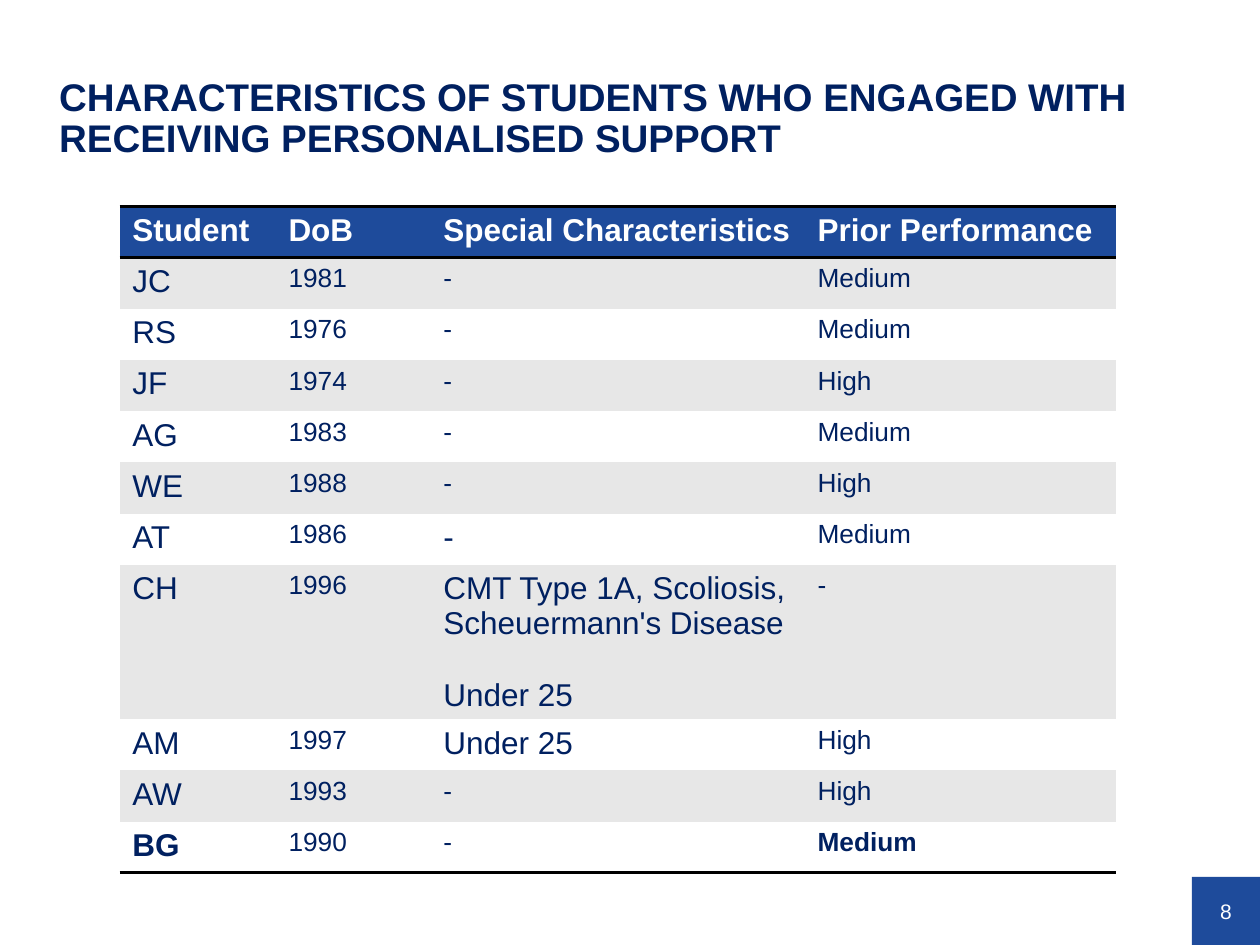
from lxml.etree import SubElement
from pptx import Presentation
from pptx.dml.color import RGBColor
from pptx.enum.shapes import MSO_SHAPE
from pptx.enum.text import MSO_ANCHOR, MSO_AUTO_SIZE, PP_ALIGN
from pptx.oxml.ns import qn
from pptx.util import Inches, Pt

FONT = "Arial"
NAVY = RGBColor(0x00, 0x20, 0x60)
BLUE = RGBColor(0x1E, 0x4B, 0x9B)
GREY = RGBColor(0xE7, 0xE7, 0xE7)
WHITE = RGBColor(0xFF, 0xFF, 0xFF)
BLACK = RGBColor(0x00, 0x00, 0x00)
PLAIN_TABLE_STYLE = "{2D5ABB26-0587-4C30-8999-92F81FD0307C}"

TITLE = "CHARACTERISTICS OF STUDENTS WHO ENGAGED WITH RECEIVING PERSONALISED SUPPORT"
PAGE_NUMBER = "8"
HEADER = ("Student", "DoB", "Special Characteristics", "Prior Performance")
STUDENTS = [
    ("JC", "1981", "-", "Medium"),
    ("RS", "1976", "-", "Medium"),
    ("JF", "1974", "-", "High"),
    ("AG", "1983", "-", "Medium"),
    ("WE", "1988", "-", "High"),
    ("AT", "1986", "-", "Medium"),
    ("CH", "1996", "CMT Type 1A, Scoliosis, Scheuermann's Disease\nUnder 25", "-"),
    ("AM", "1997", "Under 25", "High"),
    ("AW", "1993", "-", "High"),
    ("BG", "1990", "-", "Medium"),
]
LARGE_DASH = ("AT", 2)
BOLD_CELLS = {("BG", 0), ("BG", 3)}
COLUMN_WIDTHS = (1.24, 1.23, 2.97, 2.47)
TABLE_LEFT, TABLE_TOP, TABLE_HEIGHT = 0.95, 1.64, 5.28
TALL_ROW = 1.22
BADGE = 0.54


def style_paragraph(paragraph, size, color, bold=False):
    """Set the font of a whole paragraph."""
    font = paragraph.font
    font.name, font.size, font.bold = FONT, Pt(size), bold
    font.color.rgb = color


def add_border(cell, side):
    """Draw a black rule on one side of a cell."""
    line = SubElement(cell._tc.get_or_add_tcPr(), qn(f"a:{side}"), w=str(Pt(2)))
    fill = SubElement(line, qn("a:solidFill"))
    SubElement(fill, qn("a:srgbClr"), val=str(BLACK))


def fill_cell(cell, text, size, color, bold, background, sides):
    """Write and format one table cell."""
    cell.text = text
    for index, paragraph in enumerate(cell.text_frame.paragraphs):
        style_paragraph(paragraph, size, color, bold)
        if index:
            paragraph.space_before = Pt(size * 1.15)
    for side in sides:
        add_border(cell, side)
    cell.fill.solid()
    cell.fill.fore_color.rgb = background


def add_title(slide):
    """Place the slide title."""
    title = slide.shapes.title
    title.left, title.top = Inches(0.43), Inches(0.77)
    title.width, title.height = Inches(9.18), Inches(0.34)
    frame = title.text_frame
    frame.text = TITLE
    frame.word_wrap = True
    frame.auto_size = MSO_AUTO_SIZE.NONE
    frame.vertical_anchor = MSO_ANCHOR.MIDDLE
    frame.margin_left, frame.margin_top = Inches(0.04), Inches(0.02)
    frame.margin_right = frame.margin_bottom = 0
    paragraph = frame.paragraphs[0]
    paragraph.alignment = PP_ALIGN.LEFT
    paragraph.line_spacing = 0.9
    style_paragraph(paragraph, 22, NAVY, True)


def add_student_table(slide):
    """Build the banded table of students."""
    rows = len(STUDENTS) + 1
    table = slide.shapes.add_table(
        rows, len(HEADER), Inches(TABLE_LEFT), Inches(TABLE_TOP),
        Inches(sum(COLUMN_WIDTHS)), Inches(TABLE_HEIGHT)).table
    table._tbl.tblPr.find(qn("a:tableStyleId")).text = PLAIN_TABLE_STYLE
    for column, width in zip(table.columns, COLUMN_WIDTHS):
        column.width = Inches(width)
    for column, text in enumerate(HEADER):
        fill_cell(table.cell(0, column), text, 18, WHITE, True, BLUE, ("lnT", "lnB"))

    row_height = (TABLE_HEIGHT - TALL_ROW) / (rows - 1)
    table.rows[0].height = Inches(row_height)
    for row, student in enumerate(STUDENTS, 1):
        is_tall = any("\n" in text for text in student)
        table.rows[row].height = Inches(TALL_ROW if is_tall else row_height)
        background = GREY if row % 2 else WHITE
        sides = ("lnB",) if row == rows - 1 else ()
        for column, text in enumerate(student):
            key = (student[0], column)
            is_large = column == 0 or key == LARGE_DASH or (column == 2 and text != "-")
            fill_cell(table.cell(row, column), text, 18 if is_large else 15,
                      NAVY, key in BOLD_CELLS, background, sides)


def add_page_number(slide, presentation):
    """Put the page number in the bottom right corner."""
    side = Inches(BADGE)
    badge = slide.shapes.add_shape(
        MSO_SHAPE.RECTANGLE, presentation.slide_width - side,
        presentation.slide_height - side, side, side)
    badge.shadow.inherit = False
    badge.fill.solid()
    badge.fill.fore_color.rgb = BLUE
    badge.line.fill.background()
    frame = badge.text_frame
    frame.margin_left = frame.margin_right = frame.margin_top = frame.margin_bottom = 0
    frame.vertical_anchor = MSO_ANCHOR.MIDDLE
    frame.text = PAGE_NUMBER
    frame.paragraphs[0].alignment = PP_ALIGN.CENTER
    style_paragraph(frame.paragraphs[0], 12, WHITE)


def main():
    """Build and save the slide."""
    presentation = Presentation()
    presentation.slide_width, presentation.slide_height = Inches(10), Inches(7.5)
    slide = presentation.slides.add_slide(presentation.slide_layouts[5])
    add_page_number(slide, presentation)
    add_title(slide)
    add_student_table(slide)
    presentation.save("out.pptx")


if __name__ == "__main__":
    main()
